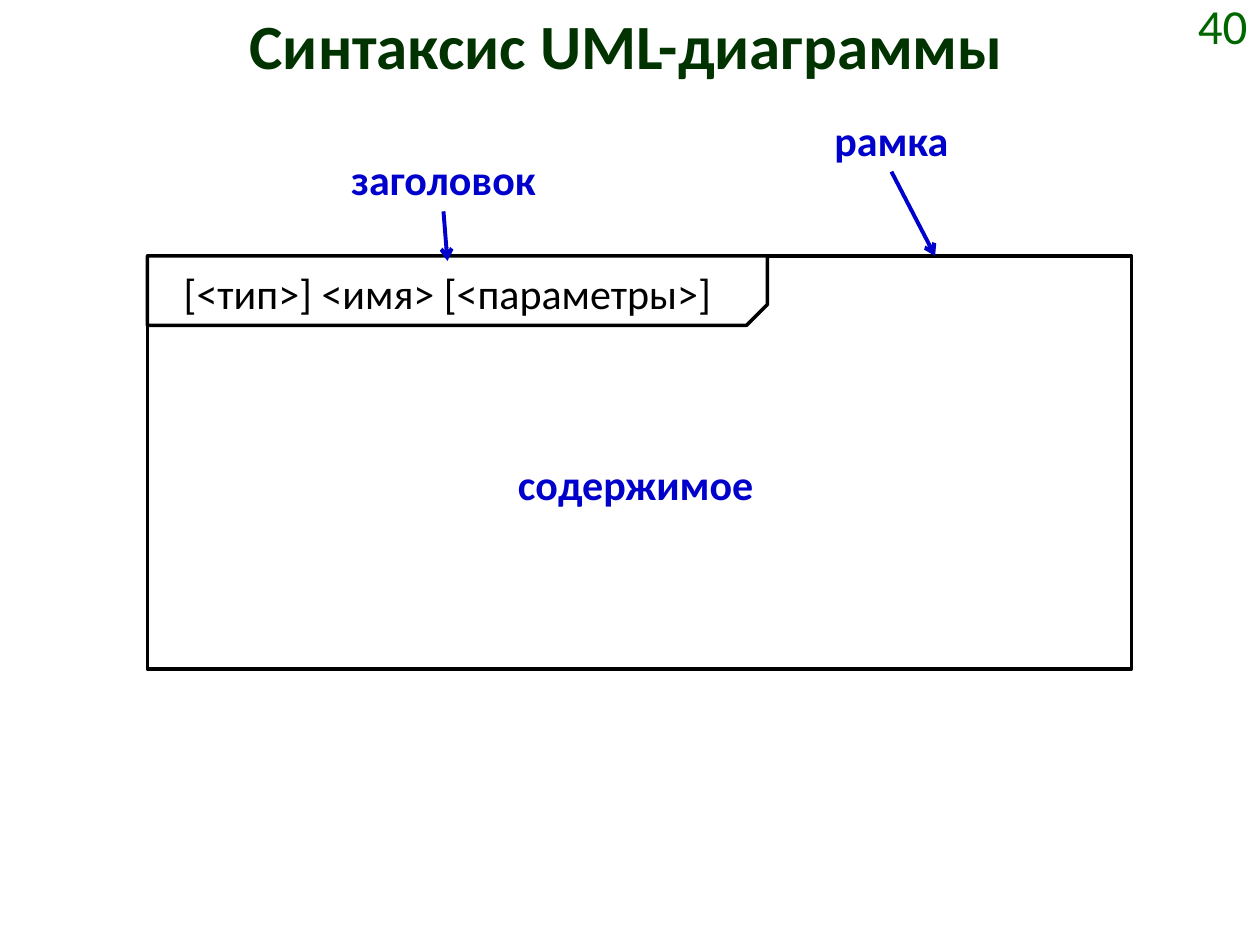
from lxml import etree
from pptx import Presentation
from pptx.dml.color import RGBColor
from pptx.enum import shapes, text
from pptx.oxml import ns
from pptx.util import Cm, Pt

FONT = "Calibri"
BLACK = RGBColor(0, 0, 0)
WHITE = RGBColor(255, 255, 255)
BLUE = RGBColor(0, 0, 0xCC)
GREEN = RGBColor(0, 0x66, 0)
DARK = RGBColor(0, 0x33, 0)
MID, TOP = text.MSO_ANCHOR.MIDDLE, text.MSO_ANCHOR.TOP


def write(shape, words, size, color, bold=False,
          align=text.PP_ALIGN.CENTER, anchor=TOP):
    frame = shape.text_frame
    frame.text = words
    frame.word_wrap = True
    frame.auto_size = text.MSO_AUTO_SIZE.NONE
    frame.vertical_anchor = anchor
    para = frame.paragraphs[0]
    para.alignment = align
    font = para.runs[0].font
    font.name, font.size, font.bold = FONT, Pt(size), bold
    font.color.rgb = color


def label(slide, words, x, y, w, color=BLUE, bold=True):
    box = slide.shapes.add_textbox(Cm(x), Cm(y), Cm(w), Cm(1.28))
    write(box, words, 24, color, bold)


def panel(slide, kind, x, y, w, h):
    """Add a white shape with a black outline."""
    shape = slide.shapes.add_shape(kind, Cm(x), Cm(y), Cm(w), Cm(h))
    shape.shadow.inherit = False
    shape.fill.solid()
    shape.fill.fore_color.rgb = WHITE
    shape.line.color.rgb = BLACK
    shape.line.width = Pt(2)
    return shape


def arrow(slide, x1, y1, x2, y2):
    line = slide.shapes.add_connector(
        shapes.MSO_CONNECTOR.STRAIGHT, Cm(x1), Cm(y1), Cm(x2), Cm(y2))
    line.line.color.rgb = BLUE
    line.line.width = Pt(2.25)
    etree.SubElement(line.line._get_or_add_ln(), ns.qn("a:tailEnd"), type="arrow")
    etree.SubElement(line._element.spPr, ns.qn("a:effectLst"))


def heading(slide, x, y, w, h):
    title = slide.shapes.title
    title.left, title.top, title.width, title.height = map(Cm, (x, y, w, h))
    write(title, "Синтаксис UML-диаграммы", 36, DARK, True)


def number(slide, x, y, w, h):
    box = slide.shapes.add_textbox(Cm(x), Cm(y), Cm(w), Cm(h))
    # The digits are taller than the box, so the side margins alone remain.
    write(box, "40", 28, GREEN, align=text.PP_ALIGN.RIGHT, anchor=MID)
    box.text_frame.margin_top = box.text_frame.margin_bottom = 0


def diagram(slide, x, y, w, h):
    """Draw the UML frame, its header tab and the labels that name them."""
    kinds = shapes.MSO_SHAPE
    panel(slide, kinds.RECTANGLE, x, y, w, h)
    tab = panel(slide, kinds.SNIP_1_RECTANGLE, x, y, 12.5, 1.4)
    tab.adjustments[0] = 0.3
    tab._element.spPr.xfrm.set("flipV", "1")
    label(slide, "[<тип>] <имя> [<параметры>]", x + 0.4, y + 0.1, 11.3, BLACK, False)
    label(slide, "рамка", x + 13.3, y - 2.98, 3.4)
    label(slide, "заголовок", x + 3.78, y - 2.18, 4.38)
    label(slide, "содержимое", x + 6.96, y + 3.96, 5.77)
    arrow(slide, x + 5.97, y - 0.9, x + 6.05, y + 0.1)
    arrow(slide, x + 15, y - 1.7, x + 15.88, y)


def main():
    deck = Presentation()
    deck.slide_width, deck.slide_height = Cm(25.4), Cm(19.05)
    slide = deck.slides.add_slide(deck.slide_layouts[5])
    heading(slide, 1.2, 0, 22.86, 2.4)
    number(slide, 22.8, 0, 2.6, 1)
    diagram(slide, 2.97, 5.16, 19.84, 8.33)
    deck.save("out.pptx")


if __name__ == "__main__":
    main()
